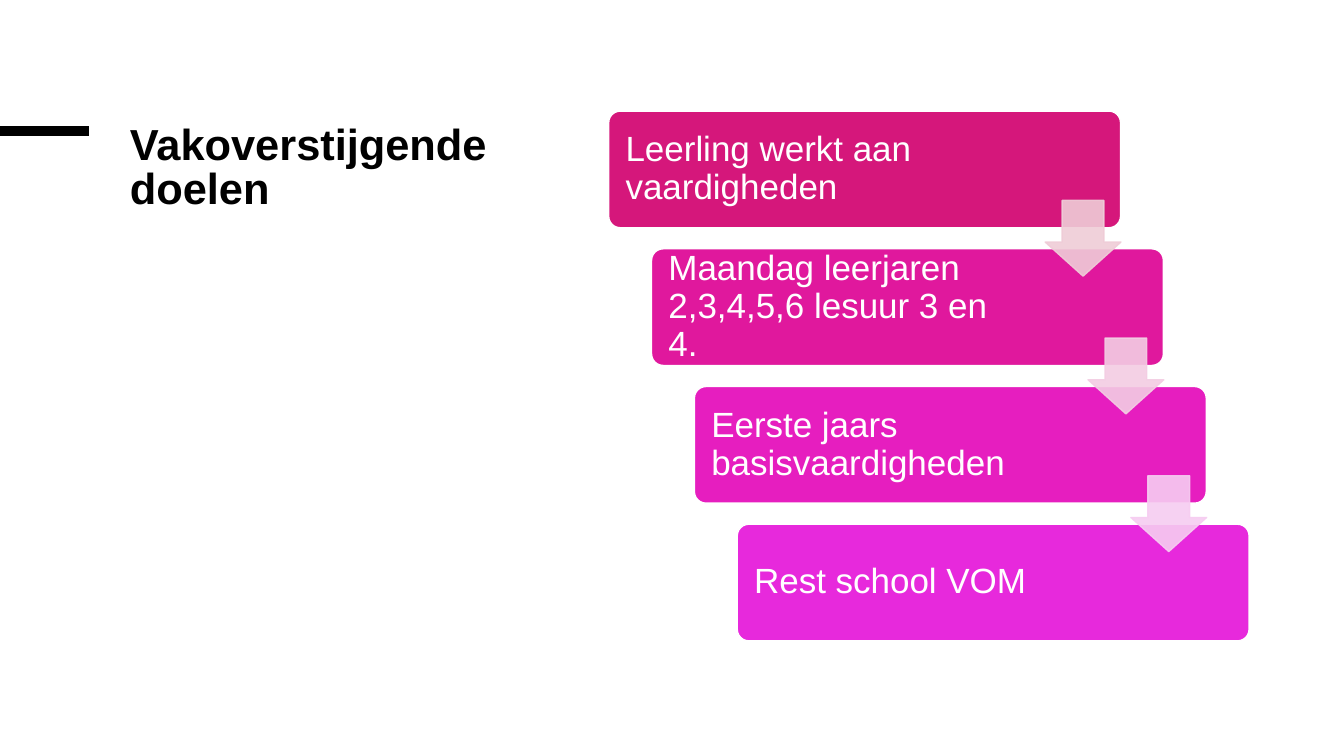
from lxml import etree
from pptx import Presentation
from pptx.dml.color import RGBColor
from pptx.enum.shapes import MSO_CONNECTOR, MSO_SHAPE
from pptx.enum.text import MSO_ANCHOR, MSO_AUTO_SIZE, PP_ALIGN
from pptx.oxml.ns import qn
from pptx.util import Cm, Pt

ROUNDED, DOWN_ARROW = MSO_SHAPE.ROUNDED_RECTANGLE, MSO_SHAPE.DOWN_ARROW
STRAIGHT = MSO_CONNECTOR.STRAIGHT
TOP, MIDDLE = MSO_ANCHOR.TOP, MSO_ANCHOR.MIDDLE
LEFT = PP_ALIGN.LEFT
NO_AUTOFIT = MSO_AUTO_SIZE.NONE

COLORS = {
    "black": "000000", "white": "FFFFFF",
    "step1": "D5177B", "step2": "E0189D", "step3": "E61EBF", "step4": "E729DC",
    "arrow1": "EFCCD7", "arrow2": "F3CDE3", "arrow3": "F6CDF1",
}
STEPS = [
    "Leerling werkt aan vaardigheden",
    "Maandag leerjaren 2,3,4,5,6 lesuur 3 en 4.",
    "Eerste jaars basisvaardigheden",
    "Rest school VOM",
]
STEP_DX, STEP_DY = 1.08, 3.47


class SlideBuilder:
    """Draws the elements of one slide in a shared style."""

    font = "Arial"

    def __init__(self, prs):
        self.s = prs.slides.add_slide(prs.slide_layouts[5])

    def color(self, name):
        return RGBColor.from_string(COLORS[name])

    def set_text(self, tf, text, size, color, spacing, anchor, bold=False):
        tf.word_wrap = True
        tf.auto_size = NO_AUTOFIT
        tf.vertical_anchor = anchor
        p = tf.paragraphs[0]
        p.text = text
        p.alignment = LEFT
        p.line_spacing = spacing
        p.font.name = self.font
        p.font.size = Pt(size)
        p.font.bold = bold
        p.font.color.rgb = self.color(color)

    def title(self, text, x, y, w, h):
        sp = self.s.shapes.title
        sp.left, sp.top, sp.width, sp.height = Cm(x), Cm(y), Cm(w), Cm(h)
        self.set_text(sp.text_frame, text, 31, "black", 0.85, TOP, bold=True)

    def rule(self, x1, x2, y, width):
        line = self.s.shapes.add_connector(STRAIGHT, Cm(x1), Cm(y), Cm(x2), Cm(y))
        line.line.color.rgb = self.color("black")
        line.line.width = Pt(width)
        etree.SubElement(line._element.spPr, qn("a:effectLst"))

    def shape(self, kind, x, y, w, h, fill, line, adjustments):
        sp = self.s.shapes.add_shape(kind, Cm(x), Cm(y), Cm(w), Cm(h))
        sp.shadow.inherit = False
        sp.fill.solid()
        sp.fill.fore_color.rgb = self.color(fill)
        sp.line.color.rgb = self.color(line)
        sp.line.width = Pt(1)
        for i, value in enumerate(adjustments):
            sp.adjustments[i] = value
        return sp

    def step(self, text, x, y, fill):
        sp = self.shape(ROUNDED, x, y, 12.9, 2.94, fill, "white", [0.1])
        tf = sp.text_frame
        tf.margin_left, tf.margin_right = Cm(0.34), Cm(3.4)
        self.set_text(tf, text, 25, "white", 0.9, MIDDLE)

    def arrow(self, x, y, fill):
        sp = self.shape(DOWN_ARROW, x, y, 1.91, 1.91, fill, fill, [0.55, 0.45])
        for clr in sp._element.spPr.iter(qn("a:srgbClr")):
            etree.SubElement(clr, qn("a:alpha"), val="90000")


def main():
    prs = Presentation()
    prs.slide_width, prs.slide_height = Cm(33.87), Cm(19.05)
    slide = SlideBuilder(prs)
    slide.title("Vakoverstijgende doelen", 3.02, 3.02, 10.46, 6.5)
    slide.rule(0, 2.25, 3.3, 6.75)
    for i, text in enumerate(STEPS):
        slide.step(text, 15.34 + i * STEP_DX, 2.8 + i * STEP_DY, f"step{i + 1}")
    for i in range(len(STEPS) - 1):
        slide.arrow(26.34 + i * STEP_DX, 5.05 + i * STEP_DY, f"arrow{i + 1}")
    prs.save("out.pptx")


if __name__ == "__main__":
    main()
